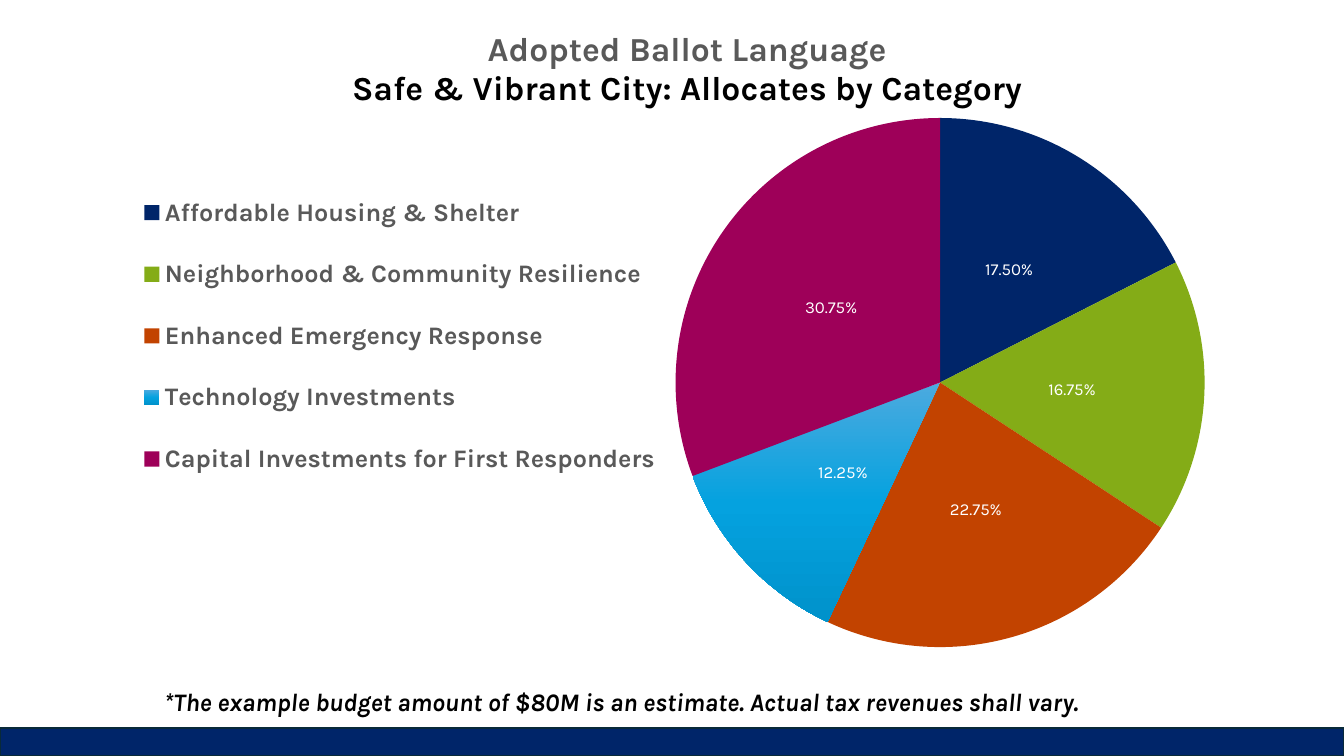
from copy import deepcopy
from dataclasses import dataclass

from pptx import Presentation
from pptx.chart.data import CategoryChartData
from pptx.dml.color import RGBColor
from pptx.enum.chart import XL_CHART_TYPE, XL_LABEL_POSITION, XL_LEGEND_POSITION
from pptx.enum.shapes import MSO_SHAPE
from pptx.enum.text import MSO_AUTO_SIZE, PP_ALIGN
from pptx.oxml import parse_xml
from pptx.oxml.ns import nsdecls, qn
from pptx.util import Cm, Pt

PIE = XL_CHART_TYPE.PIE
LEFT = XL_LEGEND_POSITION.LEFT
LABEL_CENTER = XL_LABEL_POSITION.CENTER
RECTANGLE = MSO_SHAPE.RECTANGLE
CENTER = PP_ALIGN.CENTER
GROW = MSO_AUTO_SIZE.SHAPE_TO_FIT_TEXT


@dataclass(frozen=True)
class Theme:
    font: str = "Karla"
    navy: str = "002569"
    green: str = "84AC17"
    orange: str = "C24300"
    sky: tuple = ("4CAADF", "05A2DF", "0092CB")
    plum: str = "9E0059"
    edge: str = "092A39"
    grey: str = "595959"
    black: str = "000000"
    white: str = "FFFFFF"
    title: int = 24
    body: int = 18
    label: int = 12


THEME = Theme()
ALLOCATIONS = [
    ("Affordable Housing & Shelter", 0.175, THEME.navy),
    ("Neighborhood & Community Resilience", 0.1675, THEME.green),
    ("Enhanced Emergency Response", 0.2275, THEME.orange),
    ("Technology Investments", 0.1225, THEME.sky),
    ("Capital Investments for First Responders", 0.3075, THEME.plum),
]
TITLE = [
    ("Adopted Ballot Language", THEME.grey),
    ("Safe & Vibrant City: Allocates by Category", THEME.black),
]
NOTE = ("*The example budget amount of $80M is an estimate. "
        "Actual tax revenues shall vary.")


def set_font(font, color, **values):
    for name, value in {"name": THEME.font, **values}.items():
        setattr(font, name, value)
    font.color.rgb = RGBColor.from_string(color)


def set_layout(element, **values):
    """Place a chart part by fractions of the chart area."""
    for old in element.findall(qn("c:layout")):
        element.remove(old)
    target = "inner" if element.tag == qn("c:plotArea") else None
    items = {"layoutTarget": target, "xMode": "edge", "yMode": "edge", **values}
    body = "".join(f'<c:{k} val="{v}"/>' for k, v in items.items() if v is not None)
    layout = parse_xml(f'<c:layout {nsdecls("c")}><c:manualLayout>{body}'
                       "</c:manualLayout></c:layout>")
    overlay = element.find(qn("c:overlay"))
    if overlay is None:
        element.insert(0, layout)
    else:
        overlay.addprevious(layout)


def fill_slice(point, color):
    fill = point.format.fill
    if isinstance(color, str):
        fill.solid()
        fill.fore_color.rgb = RGBColor.from_string(color)
        return
    # Gradient from top to bottom with evenly spaced stops
    fill.gradient()
    fill.gradient_angle = 270
    stop_list = point.format._element.find(".//" + qn("a:gsLst")) \
        if hasattr(point.format, "_element") else point._ser.find(".//" + qn("a:gsLst"))
    while len(stop_list) < len(color):
        stop_list.append(deepcopy(stop_list[-1]))
    for i, (stop, rgb) in enumerate(zip(fill.gradient_stops, color)):
        stop.position = i / (len(color) - 1)
        stop.color.rgb = RGBColor.from_string(rgb)


def add_title(chart):
    chart.has_title = True
    tf = chart.chart_title.text_frame
    for i, (text, color) in enumerate(TITLE):
        p = tf.paragraphs[0] if i == 0 else tf.add_paragraph()
        p.alignment = CENTER
        r = p.add_run()
        r.text = text
        set_font(r.font, color, size=Pt(THEME.title), bold=True)
    set_layout(chart.chart_title._element, x=0.21, y=0.01)


def add_legend(chart):
    chart.has_legend = True
    legend = chart.legend
    legend.position = LEFT
    legend.include_in_layout = False
    set_font(legend.font, THEME.grey, size=Pt(THEME.body), bold=True)
    set_layout(legend._element, x=0.02, y=0.22, w=0.47, h=0.51)


def add_pie(slide):
    data = CategoryChartData(number_format="0.00%")
    data.categories = [name for name, _, _ in ALLOCATIONS]
    data.add_series("Series 1", [share for _, share, _ in ALLOCATIONS])
    chart = slide.shapes.add_chart(
        PIE, Cm(2.84), Cm(0.48), Cm(28.37), Cm(16.81), data).chart
    set_font(chart.font, THEME.black, size=Pt(10))
    add_title(chart)
    add_legend(chart)

    # Slices and their percentages
    plot = chart.plots[0]
    plot.vary_by_categories = True
    for i, (_, _, color) in enumerate(ALLOCATIONS):
        fill_slice(plot.series[0].points[i], color)
    plot.has_data_labels = True
    labels = plot.data_labels
    formats = {"show_value": True, "show_percentage": False,
               "number_format": "0.00%", "number_format_is_linked": False,
               "position": LABEL_CENTER}
    for name, value in formats.items():
        setattr(labels, name, value)
    set_font(labels.font, THEME.white, size=Pt(THEME.label), bold=False)
    plot_area = chart._chartSpace.find(".//" + qn("c:plotArea"))
    set_layout(plot_area, x=0.5, y=0.1, w=0.47, h=0.89)


def add_footer_bar(slide, prs):
    height = Cm(0.71)
    sp = slide.shapes.add_shape(
        RECTANGLE, 0, prs.slide_height - height, prs.slide_width, height)
    sp.shadow.inherit = False
    sp.fill.solid()
    sp.fill.fore_color.rgb = RGBColor.from_string(THEME.navy)
    sp.line.color.rgb = RGBColor.from_string(THEME.edge)
    sp.line.width = Pt(1.5)


def add_note(slide):
    tf = slide.shapes.add_textbox(Cm(3.89), Cm(17.17), Cm(24.71), Cm(1.02)).text_frame
    tf.word_wrap = False
    tf.auto_size = GROW
    r = tf.paragraphs[0].add_run()
    r.text = NOTE
    set_font(r.font, THEME.black, size=Pt(THEME.body), bold=True, italic=True)


def main():
    prs = Presentation()
    prs.slide_width, prs.slide_height = Cm(33.87), Cm(19.05)
    slide = prs.slides.add_slide(prs.slide_layouts[6])
    add_pie(slide)
    add_footer_bar(slide, prs)
    add_note(slide)
    prs.save("out.pptx")


if __name__ == "__main__":
    main()
